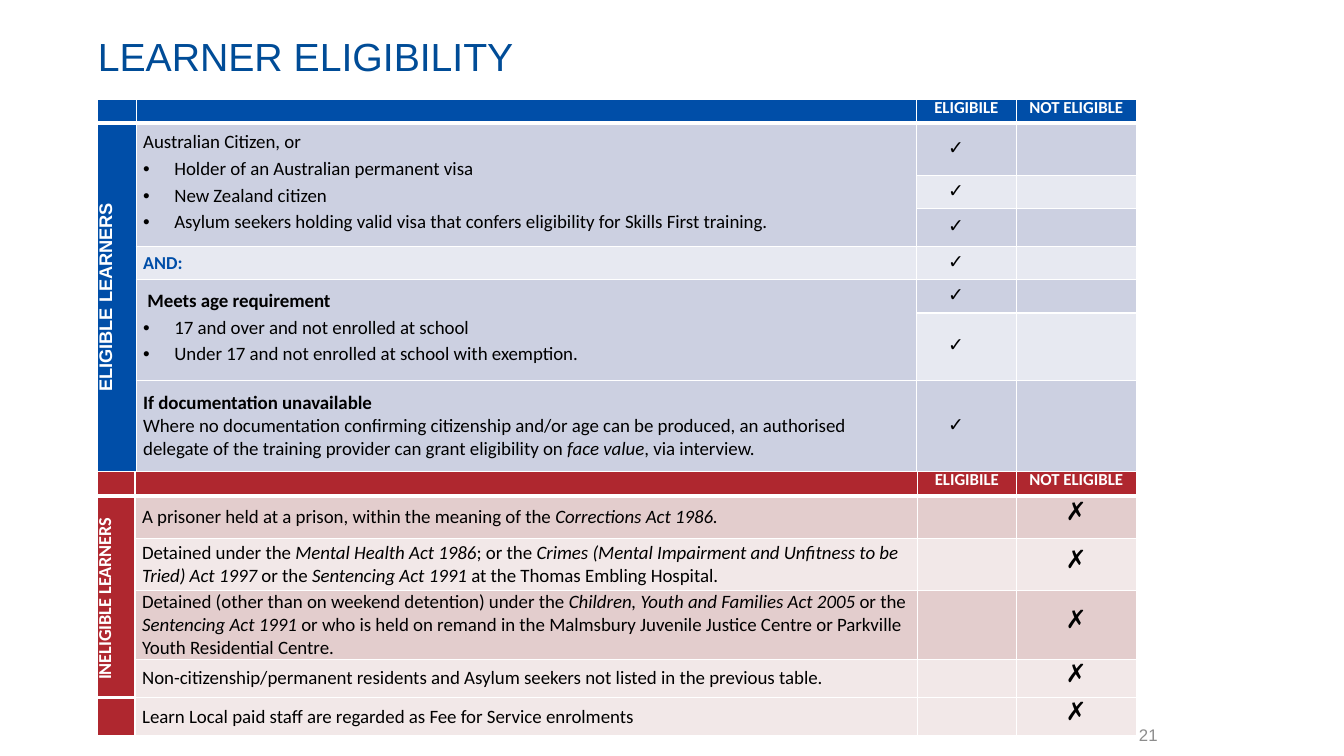
from dataclasses import dataclass

from lxml.etree import SubElement
from pptx import Presentation
from pptx.dml.color import RGBColor
from pptx.enum.text import MSO_ANCHOR as Anchor, PP_ALIGN as Align
from pptx.oxml.ns import qn
from pptx.util import Inches, Pt


@dataclass(frozen=True)
class Theme:
    heading: str = "Arial"
    body: str = "Calibri"
    title_blue: str = "004C97"
    blue: str = "004EA8"
    blue_stripes: tuple = ("CCD0E1", "E7E9F1")
    red: str = "AF272F"
    red_stripes: tuple = ("E3CDCD", "F2E8E8")
    white: str = "FFFFFF"
    black: str = "000000"
    grey: str = "8C8C8C"
    title_size: float = 28
    text_size: float = 13.5
    label_size: float = 13
    small_size: float = 12
    cross_size: float = 18


THEME = Theme()
WIDTH, HEIGHT = Inches(13.33), Inches(7.5)
LEADING = {"line_spacing": Pt(13)}
SPACED = {**LEADING, "space_before": Pt(6)}
CENTRED = {**LEADING, "alignment": Align.CENTER}


def apply(target, values):
    for name, value in values.items():
        setattr(target, name, value)


def place(part, box):
    """Set a part at a box given as shares of the slide."""
    left, top, width, height = box
    apply(part, {"left": round(left * WIDTH), "top": round(top * HEIGHT),
                 "width": round(width * WIDTH), "height": round(height * HEIGHT)})


def write(paragraph, wording, size=THEME.text_size, color=THEME.black,
          face=THEME.body, bold=False, layout=None, bullet="", indent=0,
          right_indent=0):
    """Fill one paragraph; words between asterisks are italic."""
    properties = paragraph._p.get_or_add_pPr()
    if indent:
        properties.set("marL", str(Inches(indent)))
    if right_indent:
        properties.set("marR", str(Inches(right_indent)))
    if bullet:
        properties.set("indent", str(-Inches(indent)))
        SubElement(properties, qn("a:buFont"), typeface=THEME.heading)
        SubElement(properties, qn("a:buChar"), char=bullet)
    apply(paragraph, layout or {})
    for position, piece in enumerate(wording.split("*")):
        if piece:
            run = paragraph.add_run()
            run.text = piece
            apply(run.font, {"size": Pt(size), "name": face, "bold": bold,
                             "italic": position % 2 == 1})
            run.font.color.rgb = RGBColor.from_string(color)


def bullets(*wordings):
    return [dict(wording=item, bullet="•", indent=0.31, layout=SPACED)
            for item in wordings]


def dress(cell, fill, top=1, bottom=1):
    """Give a cell its white borders, fill and insets."""
    properties = cell._tc.get_or_add_tcPr()
    for side, width in {"L": 1, "R": 1, "T": top, "B": bottom}.items():
        line = SubElement(properties, qn(f"a:ln{side}"), w=str(Pt(width)))
        ink = SubElement(line, qn("a:solidFill"))
        SubElement(ink, qn("a:srgbClr"), val=THEME.white)
    cell.fill.solid()
    cell.fill.fore_color.rgb = RGBColor.from_string(fill)
    inset = Inches(0.07)
    apply(cell, {"margin_left": inset, "margin_right": inset,
                 "margin_top": 0, "margin_bottom": 0,
                 "vertical_anchor": Anchor.MIDDLE})


def fill_cell(cell, paragraphs):
    frame = cell.text_frame
    for position, content in enumerate(paragraphs):
        write(frame.add_paragraph() if position else frame.paragraphs[0], **content)


def add_title(slide, box):
    title = slide.shapes.title
    place(title, box)
    frame = title.text_frame
    apply(frame, {"margin_left": 0, "margin_right": 0, "margin_top": 0,
                  "margin_bottom": 0, "vertical_anchor": Anchor.TOP})
    write(frame.paragraphs[0], "LEARNER ELIGIBILITY", THEME.title_size,
          THEME.title_blue, THEME.heading,
          layout={"alignment": Align.LEFT, "line_spacing": 0.9})


def add_page_number(slide, box):
    number = slide.shapes.add_textbox(0, 0, 0, 0)
    place(number, box)
    apply(number.text_frame, {"word_wrap": True, "vertical_anchor": Anchor.MIDDLE})
    write(number.text_frame.paragraphs[0], "21", THEME.small_size, THEME.grey,
          THEME.heading, layout={"alignment": Align.RIGHT})


def add_eligibility(slide, box, columns, rows, accent, stripes, pattern,
                    label, label_rows, criteria, mark, mark_column):
    """Draw a table: side label, criteria and a marked verdict column."""
    frame = slide.shapes.add_table(len(rows), len(columns), 0, 0, WIDTH, HEIGHT)
    place(frame, box)
    table = frame.table
    apply(table, {"first_row": False, "horz_banding": False})
    for column, share in zip(table.columns, columns):
        column.width = round(box[2] * WIDTH * share / sum(columns))
    for row, share in zip(table.rows, rows):
        row.height = round(box[3] * HEIGHT * share / sum(rows))

    # Fills and borders, with a heavy rule under the header
    for r in range(len(rows)):
        for c in range(len(columns)):
            side = c == 0
            shade = accent if side or r == 0 else stripes[pattern[r - 1]]
            after_label = side and r == label_rows + 1
            ends_label = side and r == label_rows and r < len(rows) - 1
            dress(table.cell(r, c), shade, 3 if r == 1 or after_label else 1,
                  3 if r == 0 or ends_label else 1)

    # Header
    for c, heading in ((2, "ELIGIBILE"), (3, "NOT ELIGIBLE")):
        cell = table.cell(0, c)
        cell.vertical_anchor = Anchor.TOP
        fill_cell(cell, [dict(wording=heading, size=THEME.small_size,
                              color=THEME.white, bold=True, layout=CENTRED)])

    # Side label
    side = table.cell(1, 0)
    side.merge(table.cell(label_rows, 0))
    side._tc.get_or_add_tcPr().set("vert", "vert270")
    fill_cell(side, [dict(size=THEME.label_size, color=THEME.white, bold=True,
                          layout=CENTRED, indent=0.08, right_indent=0.08, **label)])

    # Criteria, keyed by first row and number of rows
    for (first, count), paragraphs in criteria.items():
        cell = table.cell(first, 1)
        if count > 1:
            cell.merge(table.cell(first + count - 1, 1))
        fill_cell(cell, paragraphs)

    # Verdicts
    for r in range(1, len(rows)):
        fill_cell(table.cell(r, mark_column),
                  [dict(face=THEME.heading, layout=CENTRED, **mark)])

    # Small type in empty cells keeps the rows at their height
    for cell in table.iter_cells():
        if not cell.text_frame.text:
            SubElement(cell.text_frame.paragraphs[0]._p, qn("a:endParaRPr"), sz="800")


ELIGIBLE = {
    (1, 3): [dict(wording="Australian Citizen, or", layout=LEADING),
             *bullets("Holder of an Australian permanent visa",
                      "New Zealand citizen",
                      "Asylum seekers holding valid visa that confers eligibility "
                      "for Skills First training.")],
    (4, 1): [dict(wording="AND:", size=THEME.label_size, color=THEME.blue, bold=True)],
    (5, 2): [dict(wording=" Meets age requirement", bold=True, layout=LEADING),
             *bullets("17 and over and not enrolled at school",
                      "Under 17 and not enrolled at school with exemption.")],
    (7, 1): [dict(wording="If documentation unavailable", bold=True),
             dict(wording="Where no documentation confirming citizenship and/or age "
                  "can be produced, an authorised delegate of the training provider "
                  "can grant eligibility on *face value*, via interview.")],
}
INELIGIBLE = {(row, 1): [dict(wording=wording)] for row, wording in enumerate((
    "A prisoner held at a prison, within the meaning of the *Corrections Act 1986.*",
    "Detained under the *Mental Health Act 1986*; or the *Crimes (Mental Impairment "
    "and Unfitness to be Tried) Act 1997* or the *Sentencing Act 1991 *at the Thomas "
    "Embling Hospital.",
    "Detained (other than on weekend detention) under the *Children, Youth and "
    "Families Act 2005* or the *Sentencing Act 1991* or who is held on remand in the "
    "Malmsbury Juvenile Justice Centre or Parkville Youth Residential Centre.",
    "Non-citizenship/permanent residents and Asylum seekers not listed in the "
    "previous table.",
    "Learn Local paid staff are regarded as Fee for Service enrolments"), 1)}
# A tick is the bullet of an otherwise blank entry
TICK = dict(wording=" ", bullet="✓", indent=0.31)
CROSS = dict(wording="✗", size=THEME.cross_size, bold=True)


def main():
    deck = Presentation()
    apply(deck, {"slide_width": WIDTH, "slide_height": HEIGHT})
    slide = deck.slides.add_slide(deck.slide_layouts[5])
    left, width = 0.97 / 13.33, 10.3 / 13.33
    add_title(slide, (left, 0.37 / 7.5, 11.4 / 13.33, 0.72 / 7.5))
    add_page_number(slide, (8.58 / 13.33, 7.09 / 7.5, 3 / 13.33, 0.39 / 7.5))
    add_eligibility(slide, (left, 0.99 / 7.5, width, 3.69 / 7.5),
                    (38, 774, 99, 119), (23, 52, 33, 37, 33, 33, 67, 90),
                    THEME.blue, THEME.blue_stripes, (0, 1, 0, 1, 0, 1, 0),
                    dict(wording="ELIGIBLE LEARNERS", face=THEME.heading), 7,
                    ELIGIBLE, TICK, 2)
    add_eligibility(slide, (left, 4.68 / 7.5, width, 2.62 / 7.5),
                    (37, 776, 98, 119), (24, 42, 52, 68, 38, 38),
                    THEME.red, THEME.red_stripes, (0, 1, 0, 1, 1),
                    dict(wording="INELIGIBLE LEARNERS "), 4, INELIGIBLE, CROSS, 3)
    deck.save("out.pptx")


if __name__ == "__main__":
    main()
